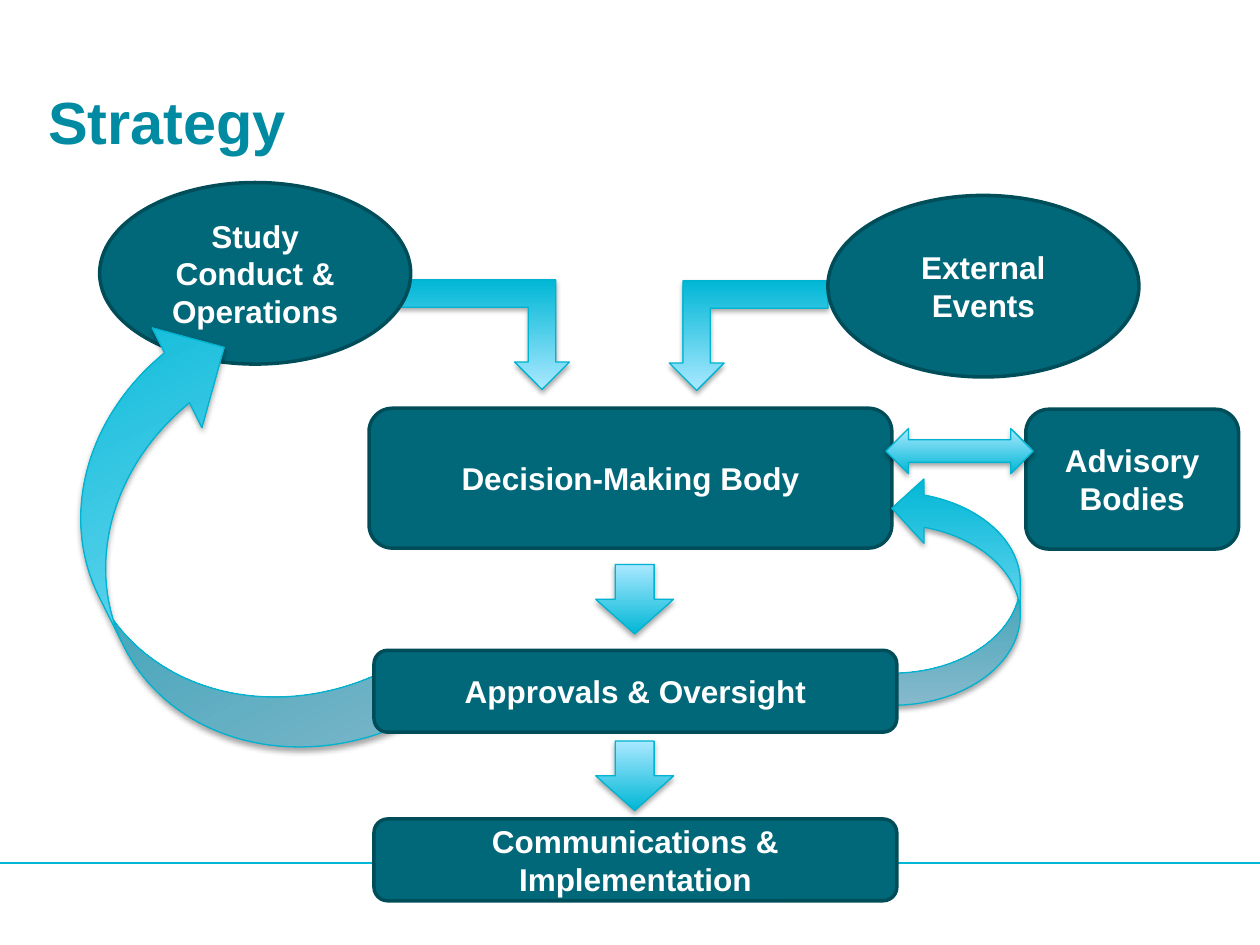
from lxml import etree
from pptx import Presentation
from pptx.dml.color import RGBColor
from pptx.enum.shapes import MSO_CONNECTOR, MSO_SHAPE
from pptx.enum.text import MSO_ANCHOR, PP_ALIGN
from pptx.oxml.ns import qn
from pptx.util import Cm, Pt

ELLIPSE = MSO_SHAPE.OVAL
ROUNDED = MSO_SHAPE.ROUNDED_RECTANGLE
BENT_ARROW = MSO_SHAPE.BENT_UP_ARROW
CURVED_ARROW = MSO_SHAPE.CURVED_RIGHT_ARROW
DOWN_ARROW = MSO_SHAPE.DOWN_ARROW
TWO_WAY_ARROW = MSO_SHAPE.LEFT_RIGHT_ARROW
STRAIGHT = MSO_CONNECTOR.STRAIGHT
MIDDLE = MSO_ANCHOR.MIDDLE
LEFT, CENTER = PP_ALIGN.LEFT, PP_ALIGN.CENTER

WHITE = RGBColor(0xFF, 0xFF, 0xFF)
TITLE_TEAL = RGBColor(0x00, 0x8B, 0xA2)
NODE_FILL = RGBColor(0x00, 0x68, 0x79)
NODE_EDGE = RGBColor(0x00, 0x4D, 0x5A)
CYAN = RGBColor(0x00, 0xB7, 0xD5)
PALE_CYAN = RGBColor(0xA9, 0xE8, 0xFF)
ARROW_EDGE = RGBColor(0x00, 0xB3, 0xD0)

SLIDE_WIDTH, SLIDE_HEIGHT = 25.4, 19.05


def write(frame, text, size=18, color=WHITE, align=CENTER, spacing=None):
    frame.word_wrap = True
    frame.vertical_anchor = MIDDLE
    paragraph = frame.paragraphs[0]
    paragraph.alignment = align
    paragraph.line_spacing = spacing
    run = paragraph.add_run()
    run.text = text
    run.font.name = "Arial"
    run.font.size = Pt(size)
    run.font.bold = True
    run.font.color.rgb = color


def add_node(slide, kind, text, left, top, width, height):
    node = slide.shapes.add_shape(kind, Cm(left), Cm(top), Cm(width), Cm(height))
    node.shadow.inherit = False
    node.fill.solid()
    node.fill.fore_color.rgb = NODE_FILL
    node.line.color.rgb = NODE_EDGE
    node.line.width = Pt(2)
    write(node.text_frame, text)


def add_soft_shadow(shape):
    shape.shadow.inherit = False
    effects = shape._element.spPr.find(qn("a:effectLst"))
    shadow = etree.SubElement(effects, qn("a:outerShdw"), blurRad=str(Pt(3.1)),
                              dist=str(Pt(1.8)), dir="5400000", rotWithShape="0")
    black = etree.SubElement(shadow, qn("a:srgbClr"), val="000000")
    etree.SubElement(black, qn("a:alpha"), val="35000")


def add_arrow(slide, kind, left, top, width, height, rotation=0, flips=()):
    """Add a gradient block arrow; flips holds any of flipH and flipV."""
    arrow = slide.shapes.add_shape(kind, Cm(left), Cm(top), Cm(width), Cm(height))
    arrow.rotation = rotation
    for flip in flips:
        arrow._element.spPr.find(qn("a:xfrm")).set(flip, "1")
    arrow.fill.gradient()
    arrow.fill.gradient_angle = 90
    for stop, color in zip(arrow.fill.gradient_stops, (CYAN, PALE_CYAN)):
        stop.color.rgb = color
    arrow.line.color.rgb = ARROW_EDGE
    arrow.line.width = Pt(0.75)
    add_soft_shadow(arrow)


def add_footer_rule(slide, top):
    rule = slide.shapes.add_connector(STRAIGHT, 0, Cm(top), Cm(SLIDE_WIDTH), Cm(top))
    rule.line.color.rgb = CYAN
    rule.line.width = Pt(0.75)
    etree.SubElement(rule._element.spPr, qn("a:effectLst"))


def add_title(slide, left, top, width, height):
    title = slide.shapes.add_textbox(Cm(left), Cm(top), Cm(width), Cm(height))
    frame = title.text_frame
    frame.margin_left = frame.margin_right = frame.margin_top = frame.margin_bottom = 0
    write(frame, "Strategy", size=34, color=TITLE_TEAL, align=LEFT, spacing=0.9)


def add_inputs(slide, left, top, width):
    """Place the two sources and the bent arrows leading down from them."""
    oval_width, oval_height = 6.27, 3.66
    external_left = left + width - oval_width
    arrow_width, arrow_height = 3.2, 2.21
    add_arrow(slide, BENT_ARROW, external_left - arrow_width, top + 1.98,
              arrow_width, arrow_height, rotation=180)
    add_arrow(slide, BENT_ARROW, left + 5.86, top + 1.96, 3.61, arrow_height,
              rotation=180, flips=["flipH"])
    add_node(slide, ELLIPSE, "Study Conduct & Operations", left, top,
             oval_width, oval_height)
    add_node(slide, ELLIPSE, "External Events", external_left, top + 0.26,
             oval_width, oval_height)


def add_feedback(slide, left, top):
    """Place the curved arrows back to operations and to the decision body."""
    add_arrow(slide, CURVED_ARROW, left, top, 4.5, 9.53, rotation=333.5,
              flips=["flipV"])
    add_arrow(slide, CURVED_ARROW, left + 16.1, top + 3.1, 2.59, 4.62,
              flips=["flipH", "flipV"])


def add_step(slide, text, left, top, width, height, arrow_gap):
    """Place a step with a down arrow that starts arrow_gap above it."""
    add_arrow(slide, DOWN_ARROW, left + 4.47, top - arrow_gap, 1.57, 1.4)
    add_node(slide, ROUNDED, text, left, top, width, height)


def add_advisory(slide, left, top, width, height):
    add_node(slide, ROUNDED, "Advisory Bodies", left, top, width, height)
    add_arrow(slide, TWO_WAY_ARROW, left - 2.82, top + 0.39, 2.97, 0.91)


def main():
    presentation = Presentation()
    presentation.slide_width = Cm(SLIDE_WIDTH)
    presentation.slide_height = Cm(SLIDE_HEIGHT)
    slide = presentation.slides.add_slide(presentation.slide_layouts[6])

    add_footer_rule(slide, 17.4)
    add_title(slide, 0.97, 1.45, 23.5, 2.13)
    add_node(slide, ROUNDED, "Decision-Making Body", 7.44, 8.23, 10.54, 2.82)
    add_inputs(slide, 2.01, 3.68, 20.95)
    add_feedback(slide, 1.88, 6.5)
    steps = [("Approvals & Oversight", 13.11, 1.73),
             ("Communications & Implementation", 16.51, 1.57)]
    for text, top, arrow_gap in steps:
        add_step(slide, text, 7.54, top, 10.54, 1.65, arrow_gap)
    add_advisory(slide, 20.68, 8.25, 4.29, 2.82)

    presentation.save("out.pptx")


if __name__ == "__main__":
    main()
